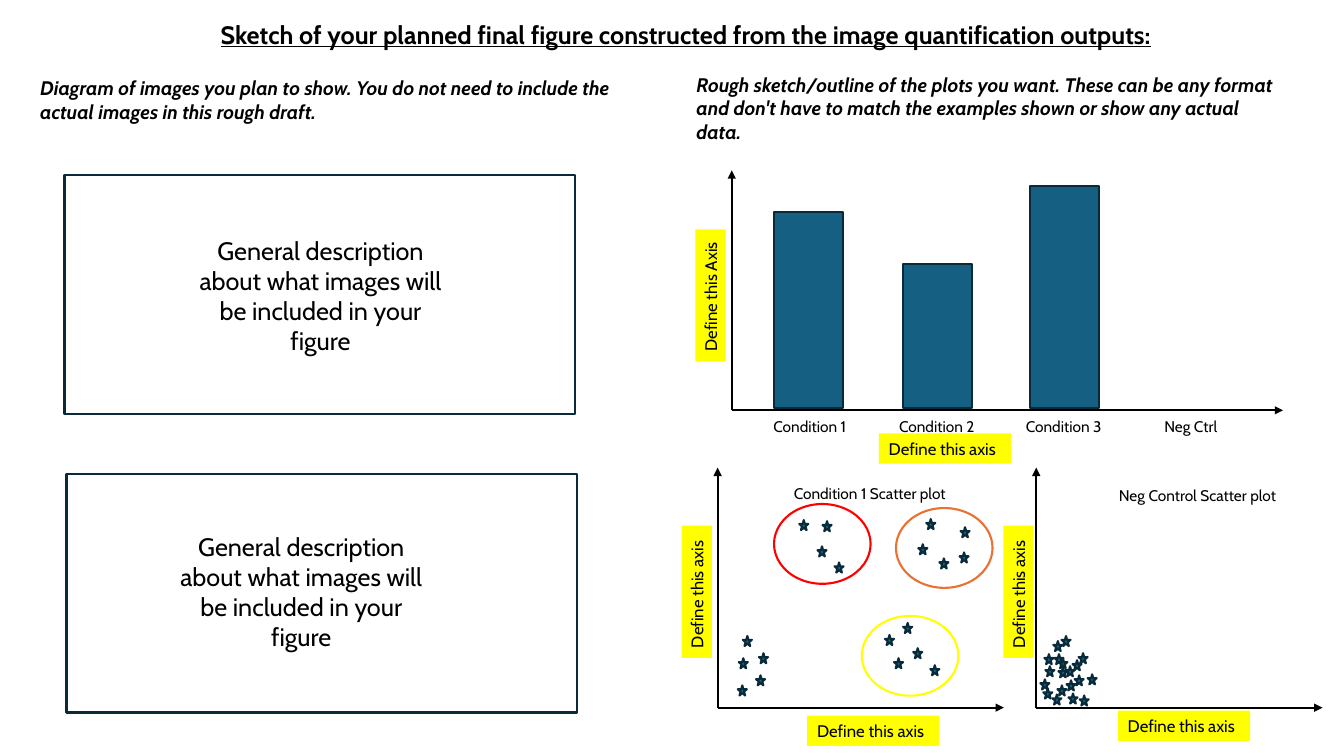
import dataclasses

import pptx
import pptx.util
from lxml import etree
from pptx.dml.color import RGBColor
from pptx.enum.shapes import MSO_CONNECTOR, MSO_SHAPE
from pptx.enum.text import MSO_ANCHOR, MSO_AUTO_SIZE, PP_ALIGN
from pptx.oxml.ns import qn

Pt = pptx.util.Pt


@dataclasses.dataclass(frozen=True)
class Theme:
    """Colours, font and type sizes of the slide."""
    font: str = "Cabin"
    text: str = "000000"
    fill: str = "156082"
    outline: str = "092A39"
    highlight: str = "FFFF00"
    red: str = "FF0000"
    orange: str = "E97132"
    heading: float = 18
    intro: float = 14
    tag: float = 12
    label: float = 11
    line: float = 1.5


THEME = Theme()
TAG_SIZE = (94.5, 21.6)
STAR_SIZE = (6.5, 7.2)
GATE_SIZE = (69, 57)
DESCRIPTION = "General description about what images will be included in your figure"
INTROS = [
    ((21.6, 51, 437.8, 41),
     "Diagram of images you plan to show. You do not need to include the "
     "actual images in this rough draft."),
    ((490.3, 48.2, 437, 58.3),
     "Rough sketch/outline of the plots you want. These can be any format and "
     "don't have to match the examples shown or show any actual data."),
]
PANELS = [((46.1, 125.3, 365, 170.6), (84.2, 38.9)),
          ((47.5, 338.4, 365, 170.6), (69.1, 37.4))]
BAR_PLOT = (522.7, 121.7, 393.8, 171.4)
CONDITIONS = ["Condition 1", "Condition 2", "Condition 3", "Neg Ctrl"]
BARS = [(30.2, 140.4), (122.4, 103), (213.1, 159.1)]
CONDITION_PLOT = (512.6, 334.1, 204.5, 171.4)
CONDITION_STARS = [
    (149, 36.7), (173.5, 42.5), (158.4, 64.8), (172.8, 60.5), (143.3, 54.7),
    (74.9, 38.2), (71.3, 56.2), (58.3, 37.4), (83.5, 67.7),
    (119.5, 119.5), (139.7, 128.9), (151.9, 141.1), (126, 136.1), (132.5, 110.9),
    (18, 120.2), (29.5, 132.5), (15.1, 136.1), (27.4, 148.3), (14.4, 155.5),
]
GATES = [(40.3, 25.9, THEME.red), (103, 105.8, THEME.highlight),
         (127.4, 28.8, THEME.orange)]
CONTROL_PLOT = (740.2, 334.1, 204.5, 171.4)
CONTROL_STARS = [
    (12.2, 123.8), (25.9, 137.5), (2.9, 151.2), (21.6, 151.9), (20.9, 141.8),
    (18, 120.2), (30.2, 132.5), (15.8, 136.1), (27.4, 148.3), (15.1, 155.5),
    (23, 161.3), (36.7, 147.6), (6.5, 141.8), (5.8, 133.2), (13, 133.2),
    (31, 162.7), (5, 157.7), (15.8, 142.6), (11.5, 162),
]


def write_text(shape, text, size, align=PP_ALIGN.LEFT, wrap=True):
    """Put one styled paragraph into a shape."""
    frame = shape.text_frame
    frame.word_wrap = wrap
    frame.auto_size = MSO_AUTO_SIZE.SHAPE_TO_FIT_TEXT
    frame.vertical_anchor = MSO_ANCHOR.TOP
    paragraph = frame.paragraphs[0]
    paragraph.text = text
    paragraph.alignment = align
    paragraph.font.name = THEME.font
    paragraph.font.size = Pt(size)
    paragraph.font.color.rgb = RGBColor.from_string(THEME.text)
    return paragraph


def add_text(slide, box, text, size, align=PP_ALIGN.LEFT, wrap=True):
    """Add a text box and return its paragraph."""
    shape = slide.shapes.add_textbox(*map(Pt, box))
    return write_text(shape, text, size, align, wrap)


def add_figure(slide, kind, box, fill=None, outline=None):
    """Add a preset shape with optional fill and outline."""
    shape = slide.shapes.add_shape(kind, *map(Pt, box))
    shape.shadow.inherit = False
    if fill:
        shape.fill.solid()
        shape.fill.fore_color.rgb = RGBColor.from_string(fill)
    else:
        shape.fill.background()
    if outline:
        shape.line.color.rgb = RGBColor.from_string(outline)
        shape.line.width = Pt(THEME.line)
    else:
        shape.line.fill.background()
    return shape


def add_tag(slide, center_x, center_y, text="Define this axis", rotation=0):
    """Add a highlighted axis tag around a centre point."""
    width, height = TAG_SIZE
    box = (center_x - width / 2, center_y - height / 2, width, height)
    shape = add_figure(slide, MSO_SHAPE.RECTANGLE, box, THEME.highlight)
    shape.rotation = rotation
    write_text(shape, text, THEME.tag, wrap=False)


def add_axes(slide, box):
    """Draw the two arrows from the lower left corner of a plot."""
    left, top, width, height = box
    bottom = top + height
    for end in ((left, top), (left + width, bottom)):
        axis = slide.shapes.add_connector(
            MSO_CONNECTOR.STRAIGHT, *map(Pt, (left, bottom, *end)))
        axis.line.color.rgb = RGBColor.from_string(THEME.text)
        axis.line.width = Pt(THEME.line)
        etree.SubElement(axis.line._get_or_add_ln(), qn("a:tailEnd"), type="triangle")
        etree.SubElement(axis._element.spPr, qn("a:effectLst"))


def add_headings(slide):
    """Add the slide title and the two introductions."""
    title = add_text(
        slide, (150.5, 10.1, 715, 29),
        "Sketch of your planned final figure constructed from the image "
        "quantification outputs:", THEME.heading, wrap=False)
    title.font.bold = title.font.underline = True
    for box, text in INTROS:
        intro = add_text(slide, box, text, THEME.intro)
        intro.font.bold = intro.font.italic = True


def add_image_panel(slide, box, offset):
    """Add a framed panel with a description at an offset inside it."""
    add_figure(slide, MSO_SHAPE.RECTANGLE, box, outline=THEME.outline)
    text_box = (box[0] + offset[0], box[1] + offset[1], 197.3, 94.3)
    add_text(slide, text_box, DESCRIPTION, THEME.heading, PP_ALIGN.CENTER)


def add_bar_plot(slide, box):
    """Sketch the bar plot with its condition labels and axis tags."""
    left, top, width, height = box
    add_axes(slide, box)
    for index, condition in enumerate(CONDITIONS):
        label_box = (left + 17.3 + 90.7 * index, top + height + 1.4, 77, 20.6)
        add_text(slide, label_box, condition, THEME.label, PP_ALIGN.CENTER)
    for offset, bar_height in BARS:
        bar_box = (left + offset, top + 170 - bar_height, 49, bar_height)
        add_figure(slide, MSO_SHAPE.RECTANGLE, bar_box, THEME.fill, THEME.outline)
    add_tag(slide, left - 15.1, top + 89.3, "Define this Axis", 270)
    add_tag(slide, left + 152.3, top + 198.7)


def add_scatter_plot(slide, box, title, title_offset, tag_x, tag_offset, stars, gates=()):
    """Sketch a scatter plot of stars with optional gates around clusters."""
    left, top = box[:2]
    add_axes(slide, box)
    add_tag(slide, left + tag_x, top + 88.6, rotation=270)
    add_tag(slide, left + tag_offset[0], top + tag_offset[1])
    title_box = (left + title_offset[0], top + title_offset[1], 132.5, 20.6)
    add_text(slide, title_box, title, THEME.label, PP_ALIGN.CENTER)
    for x, y in stars:
        add_figure(slide, MSO_SHAPE.STAR_5_POINT, (left + x, top + y, *STAR_SIZE),
                   THEME.fill, THEME.outline)
    for x, y, color in gates:
        add_figure(slide, MSO_SHAPE.OVAL, (left + x, top + y, *GATE_SIZE), outline=color)


def main():
    """Build the slide and save it."""
    presentation = pptx.Presentation()
    presentation.slide_width, presentation.slide_height = Pt(960), Pt(540)
    slide = presentation.slides.add_slide(presentation.slide_layouts[6])
    add_headings(slide)
    for box, offset in PANELS:
        add_image_panel(slide, box, offset)
    add_bar_plot(slide, BAR_PLOT)
    add_scatter_plot(slide, CONDITION_PLOT, "Condition 1 Scatter plot", (42.5, 7.9),
                     -14.8, (111.2, 187.9), CONDITION_STARS, GATES)
    add_scatter_plot(slide, CONTROL_PLOT, "Neg Control Scatter plot", (49, 9.4),
                     -12.6, (105.5, 184.3), CONTROL_STARS)
    presentation.save("out.pptx")


if __name__ == "__main__":
    main()
